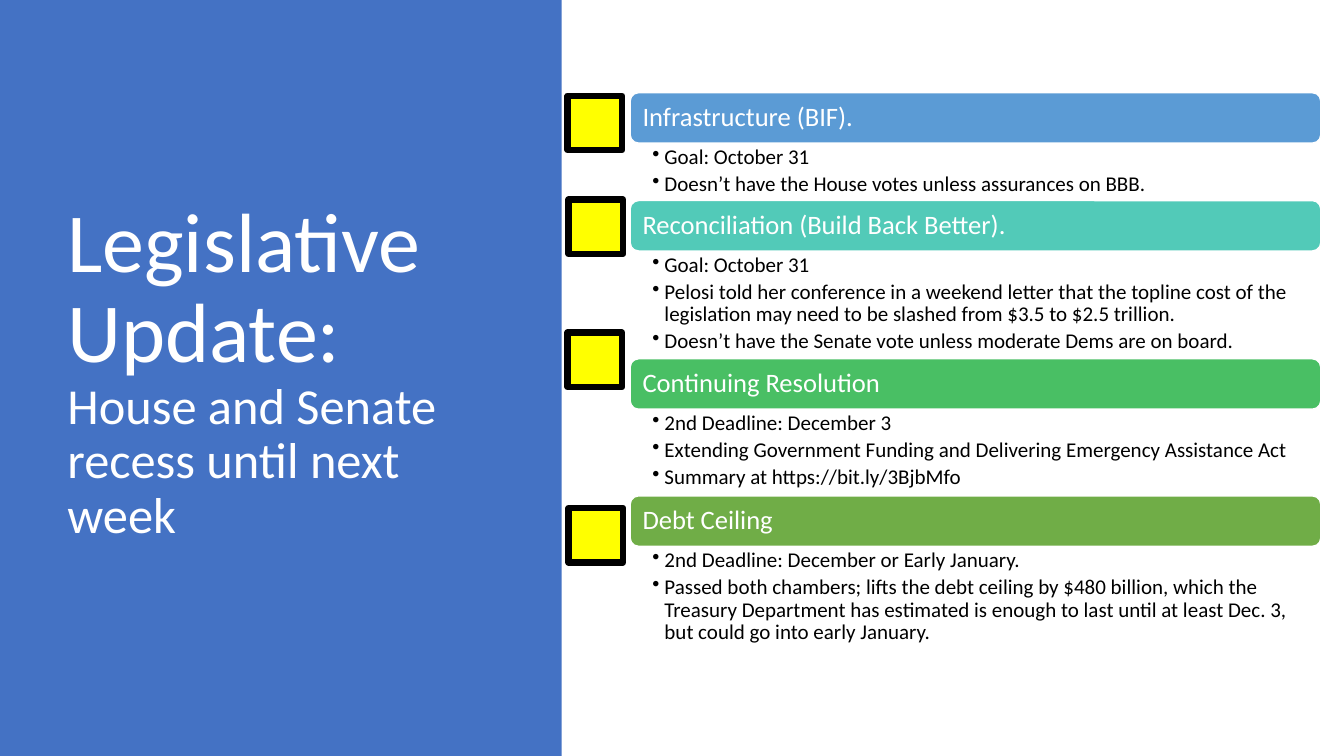
import pptx
import pptx.util
import pptx.dml.color
import pptx.enum.shapes
import pptx.enum.text
import pptx.oxml.ns
from lxml import etree
from pptx.util import Inches

COLORS = {
    "panel": "4472C4", "white": "FFFFFF", "black": "000000", "marker": "FFFF00",
    "blue": "5B9BD5", "teal": "52CAB8", "green": "49BF64", "olive": "70AD47",
}
SHAPES = pptx.enum.shapes.MSO_SHAPE
MIDDLE = pptx.enum.text.MSO_ANCHOR.MIDDLE
TOP = pptx.enum.text.MSO_ANCHOR.TOP
LEFT = pptx.enum.text.PP_ALIGN.LEFT

SECTIONS_LEFT, SECTIONS_TOP, SECTIONS_WIDTH = 6.25, 0.92, 6.85
BAR_HEIGHT = 0.5
MARKER_SIZE = 0.54

# heading, bar colour, height of the points, marker left and top, points
SECTIONS = [
    ("Infrastructure (BIF).", "blue", 0.57, (5.63, 0.95), [
        "Goal: October 31",
        "Doesn’t have the House votes unless assurances on BBB."]),
    ("Reconciliation (Build Back Better).", "teal", 1.07, (5.64, 1.98), [
        "Goal: October 31",
        "Pelosi told her conference in a weekend letter that the topline cost of the "
        "legislation may need to be slashed from $3.5 to $2.5 trillion.",
        "Doesn’t have the Senate vote unless moderate Dems are on board."]),
    ("Continuing Resolution", "green", 0.86, (5.63, 3.3), [
        "2nd Deadline: December 3",
        "Extending Government Funding and Delivering Emergency Assistance Act",
        "Summary at https://bit.ly/3BjbMfo"]),
    ("Debt Ceiling", "olive", 1.03, (5.64, 5.04), [
        "2nd Deadline: December or Early January.",
        "Passed both chambers; lifts the debt ceiling by $480 billion, which the "
        "Treasury Department has estimated is enough to last until at least Dec. 3, "
        "but could go into early January."]),
]


class SlideBuilder:
    """Holds the text style and the slide being built."""

    font_name = "Calibri"
    line_spacing = 0.9

    def __init__(self, slide):
        self.slide = slide

    def color(self, name):
        return pptx.dml.color.RGBColor.from_string(COLORS[name])

    def style_font(self, font, size, color):
        font.name = self.font_name
        font.size = pptx.util.Pt(size)
        font.color.rgb = self.color(color)

    def set_frame(self, frame, anchor, margins):
        """Wrap the text; margins are left, top, right, bottom in inches."""
        frame.word_wrap = True
        frame.vertical_anchor = anchor
        (frame.margin_left, frame.margin_top,
         frame.margin_right, frame.margin_bottom) = map(Inches, margins)

    def block(self, kind, box, fill, line=None, line_width=1):
        block = self.slide.shapes.add_shape(kind, *map(Inches, box))
        block.shadow.inherit = False
        block.fill.solid()
        block.fill.fore_color.rgb = self.color(fill)
        if line:
            block.line.color.rgb = self.color(line)
            block.line.width = pptx.util.Pt(line_width)
        else:
            block.line.fill.background()
        return block

    def title(self, box, parts):
        """Write one paragraph from (text, size) parts."""
        frame = self.slide.shapes.add_textbox(*map(Inches, box)).text_frame
        self.set_frame(frame, MIDDLE, (0.1, 0.05, 0.1, 0.05))
        paragraph = frame.paragraphs[0]
        paragraph.line_spacing = self.line_spacing
        for text, size in parts:
            run = paragraph.add_run()
            run.text = text
            self.style_font(run.font, size, "white")

    def heading_bar(self, box, text, fill):
        frame = self.block(SHAPES.ROUNDED_RECTANGLE, box, fill, "white").text_frame
        self.set_frame(frame, MIDDLE, (0.1, 0.08, 0.1, 0.08))
        frame.text = text
        paragraph = frame.paragraphs[0]
        paragraph.alignment = LEFT
        paragraph.line_spacing = self.line_spacing
        self.style_font(paragraph.runs[0].font, 19, "white")

    def bullets(self, box, points):
        frame = self.slide.shapes.add_textbox(*map(Inches, box)).text_frame
        self.set_frame(frame, TOP, (0.22, 0.03, 0.15, 0.03))
        frame.text = "\n".join(points)
        for paragraph in frame.paragraphs:
            paragraph.level = 1
            paragraph.line_spacing = self.line_spacing
            paragraph.space_after = pptx.util.Pt(3)
            properties = paragraph._p.get_or_add_pPr()
            properties.set("marL", str(Inches(0.12)))
            properties.set("indent", str(Inches(-0.12)))
            bullet = etree.SubElement(properties, pptx.oxml.ns.qn("a:buChar"))
            bullet.set("char", "•")
            self.style_font(paragraph.runs[0].font, 15, "black")


def main():
    deck = pptx.Presentation()
    deck.slide_width, deck.slide_height = Inches(13.33), Inches(7.5)
    builder = SlideBuilder(deck.slides.add_slide(deck.slide_layouts[6]))

    builder.block(SHAPES.RECTANGLE, (0, 0, 5.57, 7.5), "panel")
    builder.title((0.57, 0.68, 4.16, 6.02), [
        ("Legislative Update: ", 60),
        ("House and Senate recess until next week", 36)])

    top = SECTIONS_TOP
    for heading, fill, points_height, marker, points in SECTIONS:
        builder.heading_bar((SECTIONS_LEFT, top, SECTIONS_WIDTH, BAR_HEIGHT), heading, fill)
        top += BAR_HEIGHT
        builder.bullets((SECTIONS_LEFT, top, SECTIONS_WIDTH, points_height), points)
        top += points_height
        builder.block(SHAPES.RECTANGLE, (*marker, MARKER_SIZE, MARKER_SIZE),
                      "marker", "black", 4.5)

    deck.save("out.pptx")


if __name__ == "__main__":
    main()
